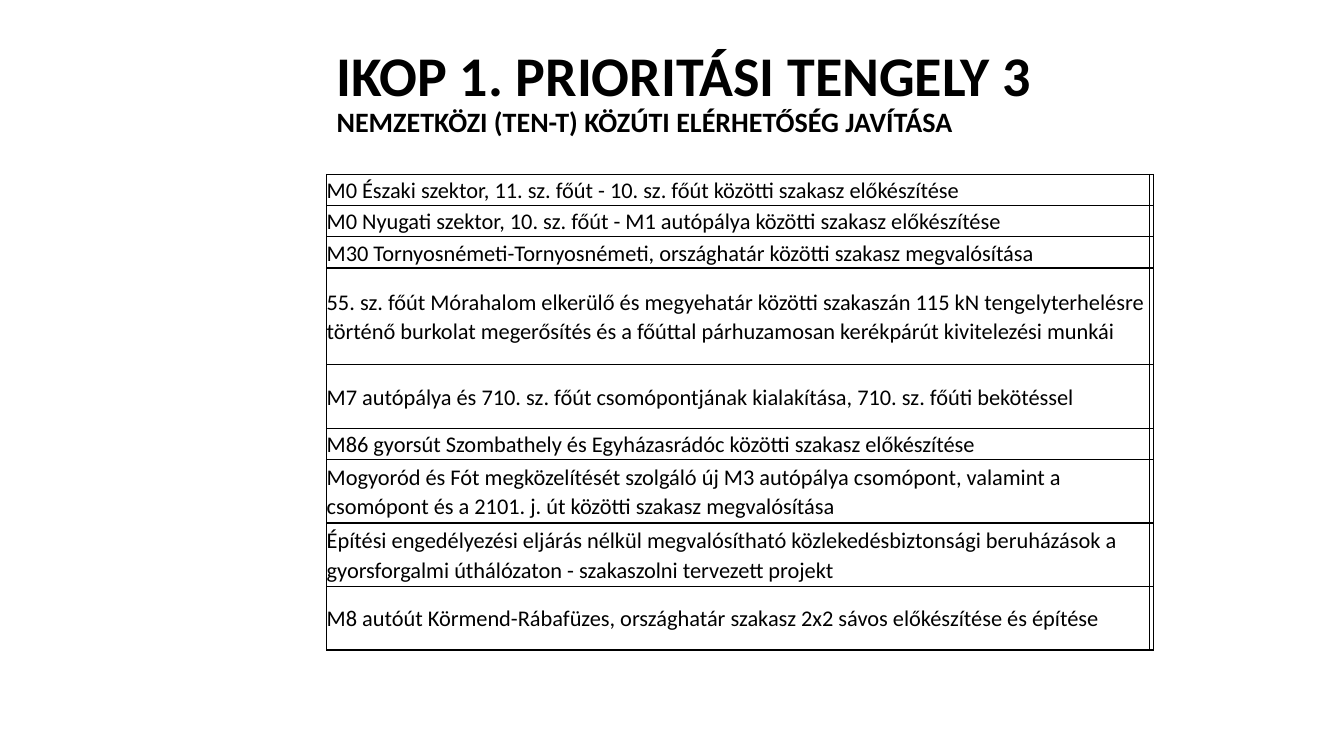
from dataclasses import dataclass

from lxml.etree import SubElement
from pptx import Presentation
from pptx.dml.color import RGBColor
from pptx.enum.text import MSO_ANCHOR as Anchor
from pptx.oxml.ns import qn
from pptx.util import Inches, Pt


@dataclass(frozen=True)
class Theme:
    font: str = "Calibri"
    ink: str = "000000"
    paper: str = "FFFFFF"
    title: int = 40
    subtitle: int = 20
    body: int = 16
    border: int = 1


THEME = Theme()

# Row height in inches and project name
PROJECTS = [
    (0.31, "M0 Északi szektor, 11. sz. főút - 10. sz. főút közötti szakasz előkészítése"),
    (0.31, "M0 Nyugati szektor, 10. sz. főút - M1 autópálya közötti szakasz előkészítése"),
    (0.31, "M30 Tornyosnémeti-Tornyosnémeti, országhatár közötti szakasz megvalósítása"),
    (0.96, "55. sz. főút Mórahalom elkerülő és megyehatár közötti szakaszán 115 kN "
           "tengelyterhelésre történő burkolat megerősítés és a főúttal párhuzamosan "
           "kerékpárút kivitelezési munkái"),
    (0.63, "M7 autópálya és 710. sz. főút csomópontjának kialakítása, 710. sz. főúti bekötéssel"),
    (0.31, "M86 gyorsút Szombathely és Egyházasrádóc közötti szakasz előkészítése"),
    (0.63, "Mogyoród és Fót megközelítését szolgáló új M3 autópálya csomópont, valamint a "
           "csomópont és a 2101. j. út közötti szakasz megvalósítása"),
    (0.63, "Építési engedélyezési eljárás nélkül megvalósítható közlekedésbiztonsági "
           "beruházások a gyorsforgalmi úthálózaton - szakaszolni tervezett projekt"),
    (0.63, "M8 autóút Körmend-Rábafüzes, országhatár szakasz 2x2 sávos előkészítése és építése"),
]


def add_text(p, text, size=THEME.body, bold=False, spacing=1.07):
    p.line_spacing = spacing
    r = p.add_run()
    r.text = text
    r.font.name = THEME.font
    r.font.size = Pt(size)
    r.font.bold = bold
    r.font.color.rgb = RGBColor.from_string(THEME.ink)


def style_cell(cell):
    cell.margin_left = cell.margin_right = cell.margin_top = cell.margin_bottom = 0
    cell.vertical_anchor = Anchor.MIDDLE
    # Borders come before the fill in the cell properties
    tc_pr = cell._tc.get_or_add_tcPr()
    for side in ("a:lnL", "a:lnR", "a:lnT", "a:lnB"):
        ln = SubElement(tc_pr, qn(side), w=str(Pt(THEME.border)))
        SubElement(SubElement(ln, qn("a:solidFill")), qn("a:srgbClr"), val=THEME.ink)
    cell.fill.solid()
    cell.fill.fore_color.rgb = RGBColor.from_string(THEME.paper)


def add_title(slide, left, top, width, height):
    sp = slide.shapes.add_textbox(Inches(left), Inches(top), Inches(width), Inches(height))
    tf = sp.text_frame
    tf.word_wrap = True
    tf.vertical_anchor = Anchor.MIDDLE
    p = tf.paragraphs[0]
    add_text(p, "IKOP 1. PRIORITÁSI TENGELY 3", size=THEME.title, bold=True, spacing=0.9)
    p.add_line_break()
    add_text(p, "NEMZETKÖZI (TEN-T) KÖZÚTI ELÉRHETŐSÉG JAVÍTÁSA",
             size=THEME.subtitle, bold=True, spacing=0.9)


def add_project_table(slide, left, top, width, margin_col=0.04):
    height = sum(h for h, _ in PROJECTS)
    table = slide.shapes.add_table(len(PROJECTS), 2, Inches(left), Inches(top),
                                   Inches(width), Inches(height)).table
    table.first_row = table.horz_banding = False
    table.columns[0].width = Inches(width - margin_col)
    table.columns[1].width = Inches(margin_col)
    for row, (row_height, name) in zip(table.rows, PROJECTS):
        row.height = Inches(row_height)
        for cell in row.cells:
            style_cell(cell)
        add_text(row.cells[0].text_frame.paragraphs[0], name)


def main():
    prs = Presentation()
    prs.slide_width, prs.slide_height = Inches(13.33), Inches(7.5)
    slide = prs.slides.add_slide(prs.slide_layouts[6])
    left, width = 3.24, 8.2
    add_title(slide, left, 0.3, width, 1.25)
    add_project_table(slide, left, 1.73, width)
    prs.save("out.pptx")


if __name__ == "__main__":
    main()
